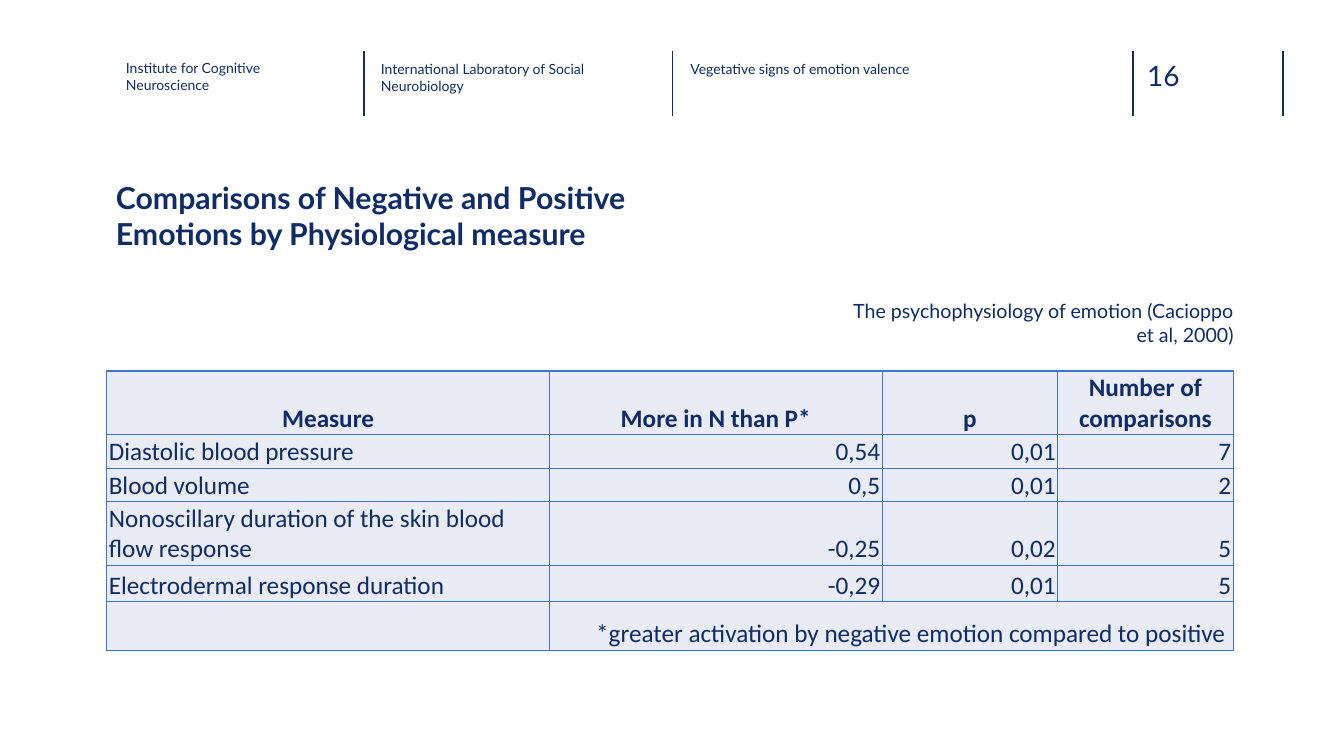
from pptx import Presentation
from pptx.dml.color import RGBColor
from pptx.enum.shapes import MSO_CONNECTOR
from pptx.enum.text import MSO_ANCHOR, MSO_AUTO_SIZE, PP_ALIGN
from pptx.oxml.ns import qn
from pptx.util import Inches, Pt
from lxml.etree import SubElement

NAVY = RGBColor(0x0F, 0x2C, 0x68)
RULE = RGBColor(0x10, 0x2D, 0x69)
PALE = RGBColor(0xE9, 0xEB, 0xF5)
EDGE = RGBColor(0x44, 0x72, 0xC4)

COLS, ROWS = 160, 90
LEFT, MID, RIGHT = PP_ALIGN.LEFT, PP_ALIGN.CENTER, PP_ALIGN.RIGHT
RULES = [43.32, 80.04, 134.88, 152.76]
HEADS = [
    ("Institute for Cognitive Neuroscience", (15, 7.1, 25, 5.4)),
    ("International Laboratory of Social Neurobiology", (45.36, 7.2, 27.1, 5.4)),
    ("Vegetative signs of emotion valence", (82.2, 7.2, 27.1, 5.4)),
]
WIDTHS = [52.7, 39.6, 20.9, 20.9]
HEIGHTS = [7.6, 4, 4, 7.6, 4.3, 5.8]
DATA = [
    ["Measure", "More in N than P*", "p", "Number of comparisons"],
    ["Diastolic blood pressure", "0,54", "0,01", "7"],
    ["Blood volume", "0,5", "0,01", "2"],
    ["Nonoscillary duration of the skin blood flow response", "-0,25", "0,02", "5"],
    ["Electrodermal response duration", "-0,29", "0,01", "5"],
    ["", "*greater activation by negative emotion compared to positive ", "", ""],
]


class Page:
    """Draw styled elements on one slide, placed on a grid of square cells."""

    def __init__(self, deck):
        self.slide = deck.slides.add_slide(deck.slide_layouts[5])
        self.shapes = self.slide.shapes
        self.unit = deck.slide_width / COLS
        self.font = "Lato"

    def size(self, *cells):
        return [round(cell * self.unit) for cell in cells]

    def put(self, frame, text, size, bold=False, align=LEFT, font=None):
        par = frame.paragraphs[0]
        par.alignment = align
        run = par.add_run()
        run.text = text
        run.font.name = font or self.font
        run.font.size = Pt(size)
        run.font.bold = bold
        run.font.color.rgb = NAVY

    def fit(self, frame):
        frame.word_wrap = True
        frame.auto_size = MSO_AUTO_SIZE.NONE
        frame.vertical_anchor = MSO_ANCHOR.TOP
        frame.margin_left = frame.margin_right = 0
        frame.margin_top = frame.margin_bottom = 0

    def title(self, text, box, size):
        shape = self.shapes.title
        shape.left, shape.top, shape.width, shape.height = self.size(*box)
        self.fit(shape.text_frame)
        self.put(shape.text_frame, text, size, bold=True)

    def text(self, text, box, size, align=LEFT):
        frame = self.shapes.add_textbox(*self.size(*box)).text_frame
        self.fit(frame)
        self.put(frame, text, size, align=align)

    def rule(self, col, top, end):
        line = self.shapes.add_connector(
            MSO_CONNECTOR.STRAIGHT, *self.size(col, top, col, end))
        line.line.color.rgb = RULE
        line.line.width = Pt(1)
        SubElement(line._element.spPr, qn("a:effectLst"))

    def frame(self, cell):
        props = cell._tc.get_or_add_tcPr()
        for side in ("a:lnL", "a:lnR", "a:lnT", "a:lnB"):
            line = SubElement(props, qn(side), w=str(Pt(1)))
            fill = SubElement(line, qn("a:solidFill"))
            SubElement(fill, qn("a:srgbClr"), val=str(EDGE))
        cell.fill.solid()
        cell.fill.fore_color.rgb = PALE
        cell.vertical_anchor = MSO_ANCHOR.BOTTOM
        cell.margin_left = cell.margin_right = Inches(0.02)
        cell.margin_top = cell.margin_bottom = Inches(0.01)

    def table(self, data, left, top, widths, heights, size):
        box = self.size(left, top, sum(widths), sum(heights))
        table = self.shapes.add_table(len(data), len(widths), *box).table
        for col, width in zip(table.columns, self.size(*widths)):
            col.width = width
        for row, height in zip(table.rows, self.size(*heights)):
            row.height = height
        for r, row in enumerate(data):
            for c, text in enumerate(row):
                cell = table.cell(r, c)
                self.frame(cell)
                if text:
                    align = MID if r == 0 else RIGHT if c else LEFT
                    self.put(cell.text_frame, text, size, r == 0, align, "Calibri")
        last = len(data) - 1
        table.cell(last, 1).merge(table.cell(last, len(widths) - 1))


def main():
    deck = Presentation()
    deck.slide_width, deck.slide_height = Inches(COLS / 12), Inches(ROWS / 12)
    page = Page(deck)
    for col in RULES:
        page.rule(col, 6.12, 13.8)
    page.text("16", (136.56, 6.96, 8.76, 4.08), 20)
    page.title("Comparisons of Negative and Positive Emotions by Physiological measure",
               (13.8, 21.36, 73.8, 10.2), 21.6)
    for text, box in HEADS:
        page.text(text, box, 10)
    page.text("The psychophysiology of emotion (Cacioppo et al, 2000)",
              (100.32, 35.64, 46.56, 10.2), 14, RIGHT)
    page.table(DATA, 12.72, 44.16, WIDTHS, HEIGHTS, 18)
    deck.save("out.pptx")


if __name__ == "__main__":
    main()
